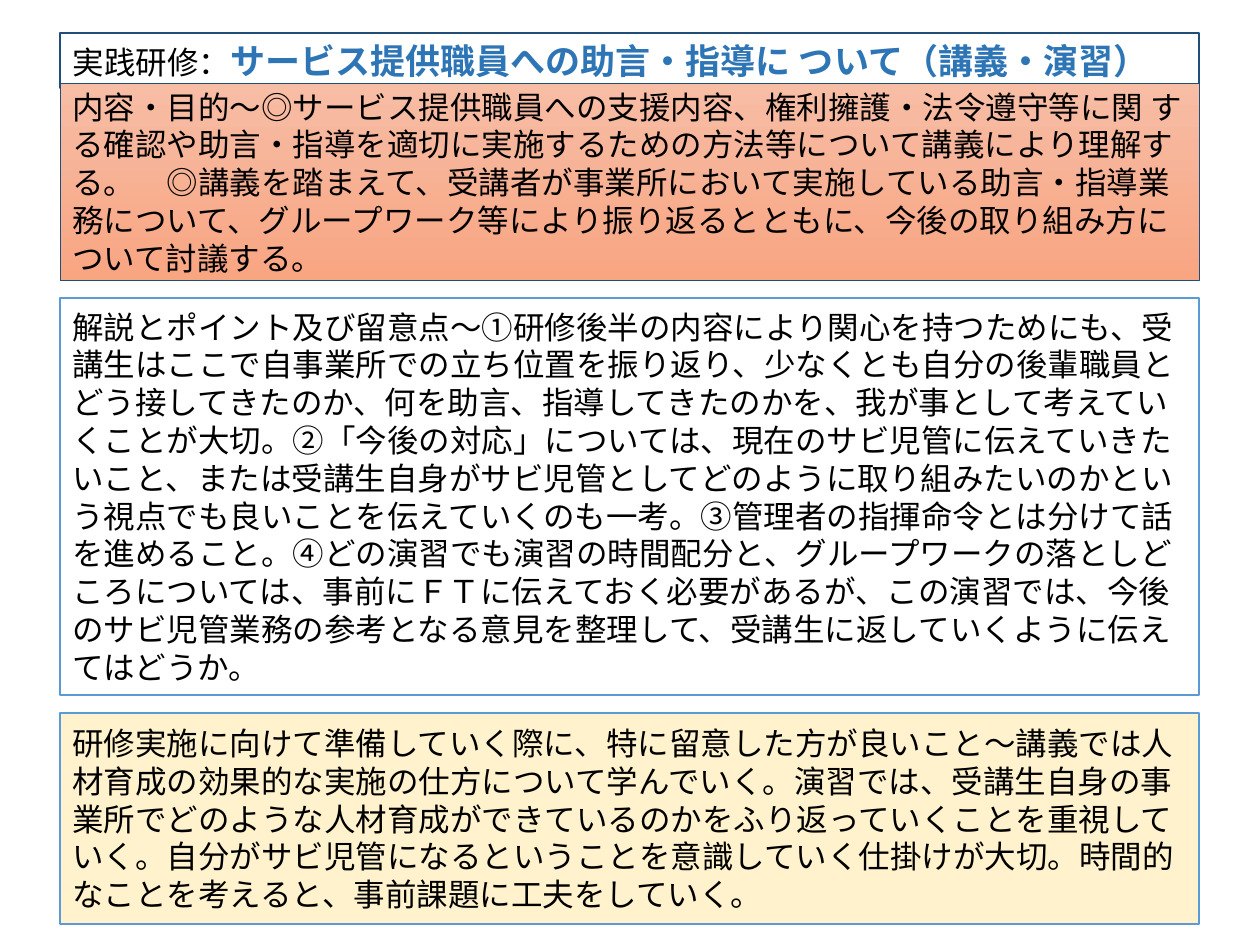
"""Build the training slide: a title bar above three text panels."""
from dataclasses import dataclass
from typing import Optional

from lxml.etree import SubElement
from pptx import Presentation
from pptx.dml.color import RGBColor
from pptx.enum.shapes import MSO_SHAPE as Shp
from pptx.enum.text import MSO_ANCHOR as Anchor, MSO_AUTO_SIZE as Auto, PP_ALIGN as Align
from pptx.oxml.ns import qn
from pptx.util import Emu, Pt

PX_PER_INCH = 126
LEFT, WIDTH = 60, 1139


@dataclass(frozen=True)
class Theme:
    font: str = "Noto Sans CJK JP"
    text: str = "000000"
    accent: str = "2E75B6"
    dark_line: str = "1F4E79"
    light_line: str = "5B9BD5"
    body_size: int = 18
    title_size: int = 20
    leading: float = 1.2


@dataclass(frozen=True)
class Run:
    text: str
    size: int
    color: str
    bold: bool = False


@dataclass(frozen=True)
class Panel:
    top: int
    height: int
    fills: tuple[str, ...]
    line: str
    line_width: float
    text: str


THEME = Theme()

TITLE = [
    Run("実践研修：", THEME.body_size, THEME.text),
    Run("サービス提供職員への助言・指導に ついて（講義・演習）", THEME.title_size, THEME.accent, True),
]

PANELS = [
    Panel(83, 198, ("F7BDA5", "F8A582"), THEME.dark_line, 0.5,
          "内容・目的～◎サービス提供職員への支援内容、権利擁護・法令遵守等に関 する確認や助言・指導を"
          "適切に実施するための方法等について講義により理解する。　◎講義を踏まえて、受講者が事業所において"
          "実施している助言・指導業務について、グループワーク等により振り返るとともに、今後の取り組み方に"
          "ついて討議する。"),
    Panel(298, 397, ("FFFFFF",), THEME.light_line, 1,
          "解説とポイント及び留意点～①研修後半の内容により関心を持つためにも、受講生はここで自事業所での"
          "立ち位置を振り返り、少なくとも自分の後輩職員とどう接してきたのか、何を助言、指導してきたのかを、"
          "我が事として考えていくことが大切。②「今後の対応」については、現在のサビ児管に伝えていきたいこと、"
          "または受講生自身がサビ児管としてどのように取り組みたいのかという視点でも良いことを伝えていくのも"
          "一考。③管理者の指揮命令とは分けて話を進めること。④どの演習でも演習の時間配分と、グループワークの"
          "落としどころについては、事前にＦＴに伝えておく必要があるが、この演習では、今後のサビ児管業務の"
          "参考となる意見を整理して、受講生に返していくように伝えてはどうか。"),
    Panel(713, 211, ("FFF2CC",), THEME.light_line, 1,
          "研修実施に向けて準備していく際に、特に留意した方が良いこと～講義では人材育成の効果的な実施の仕方に"
          "ついて学んでいく。演習では、受講生自身の事業所でどのような人材育成ができているのかをふり返っていく"
          "ことを重視していく。自分がサビ児管になるということを意識していく仕掛けが大切。時間的なことを考えると、"
          "事前課題に工夫をしていく。"),
]


def px(n: int) -> Emu:
    """Turn pixels into EMU."""
    return Emu(round(n * 914400 / PX_PER_INCH))


def rgb(code: str) -> RGBColor:
    """Turn a hex code into a colour."""
    return RGBColor.from_string(code)


def write(sp, runs: list[Run], anchor: Anchor) -> None:
    """Fill a shape with one left-aligned paragraph of runs."""
    tf = sp.text_frame
    tf.word_wrap, tf.auto_size, tf.vertical_anchor = True, Auto.NONE, anchor
    p = tf.paragraphs[0]
    p.alignment, p.space_before = Align.LEFT, Pt(0)
    p.line_spacing = Pt(max(run.size for run in runs) * THEME.leading)
    for run in runs:
        r = p.add_run()
        r.text = run.text
        r.font.name, r.font.size, r.font.bold = THEME.font, Pt(run.size), run.bold
        r.font.color.rgb = rgb(run.color)
        SubElement(r.font._element, qn("a:ea"), typeface=THEME.font)


def outline(sp, color: str, width: float) -> None:
    """Give a shape its border."""
    sp.line.color.rgb, sp.line.width = rgb(color), Pt(width)


def paint(sp, fills: tuple[str, ...]) -> None:
    """Fill a shape with one colour or a downward gradient."""
    if len(fills) == 1:
        sp.fill.solid()
        sp.fill.fore_color.rgb = rgb(fills[0])
        return
    sp.fill.gradient()
    sp.fill.gradient_angle = 270
    for stop, color in zip(sp.fill.gradient_stops, fills):
        stop.color.rgb = rgb(color)


def add_title(slide) -> None:
    """Place and format the title placeholder."""
    sp = slide.shapes.title
    sp.left, sp.top, sp.width, sp.height = px(LEFT), px(33), px(WIDTH), px(55)
    outline(sp, THEME.dark_line, 0.75)
    write(sp, TITLE, Anchor.TOP)


def add_panel(slide, panel: Panel) -> None:
    """Draw one text panel."""
    sp = slide.shapes.add_shape(Shp.RECTANGLE, px(LEFT), px(panel.top), px(WIDTH), px(panel.height))
    sp.shadow.inherit = False
    paint(sp, panel.fills)
    outline(sp, panel.line, panel.line_width)
    write(sp, [Run(panel.text, THEME.body_size, THEME.text)], Anchor.MIDDLE)


def main() -> None:
    """Build and save the slide."""
    prs = Presentation()
    prs.slide_width, prs.slide_height = px(1260), px(945)
    slide = prs.slides.add_slide(prs.slide_layouts[5])
    add_title(slide)
    for panel in PANELS:
        add_panel(slide, panel)
    prs.save("out.pptx")


if __name__ == "__main__":
    main()
